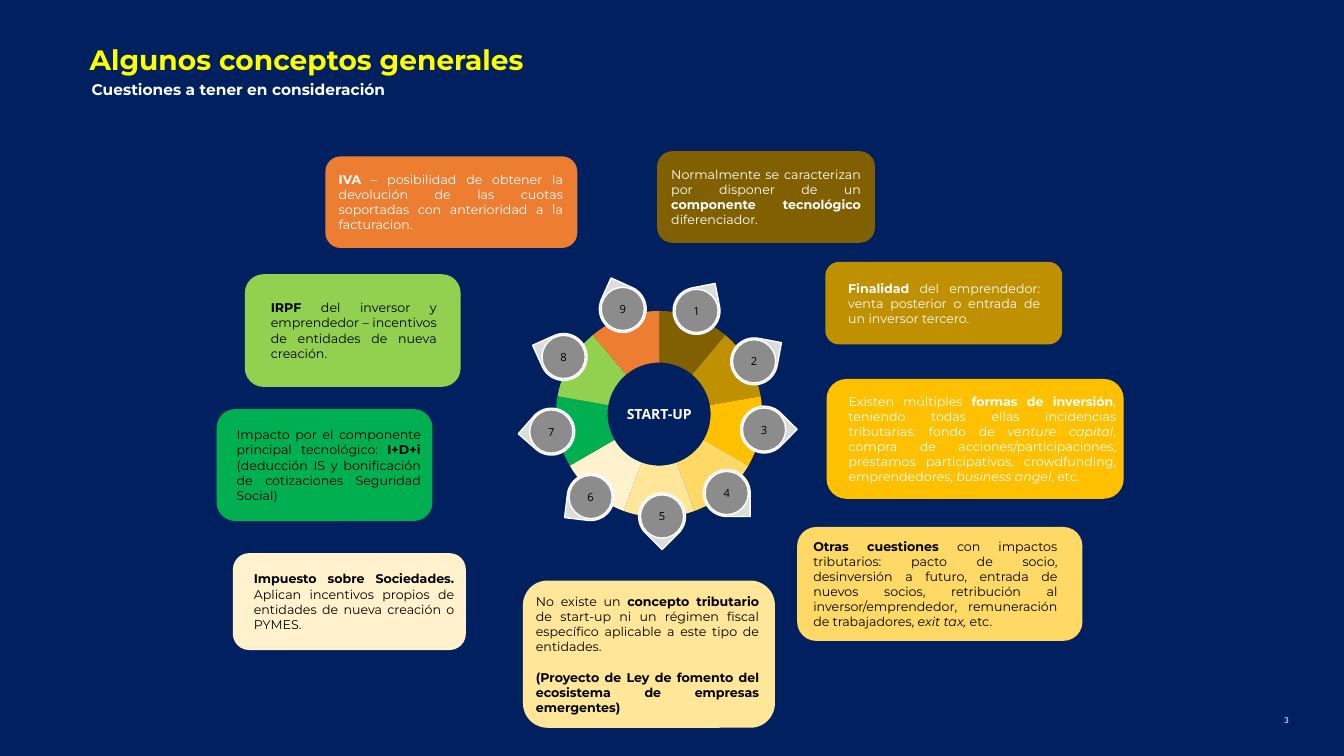
from dataclasses import dataclass

from lxml import etree
from pptx import Presentation
from pptx.chart.data import CategoryChartData
from pptx.dml.color import RGBColor
from pptx.enum.chart import XL_CHART_TYPE as ChartType
from pptx.enum.shapes import MSO_SHAPE as Shape
from pptx.enum.text import MSO_ANCHOR as Anchor, MSO_AUTO_SIZE as AutoSize, PP_ALIGN as Align
from pptx.oxml import parse_xml
from pptx.oxml.ns import nsdecls, qn
from pptx.util import Cm, Pt


@dataclass(frozen=True)
class Theme:
    background: str = "002060"
    title: str = "FFFF00"
    white: str = "FFFFFF"
    black: str = "000000"
    drop: str = "DCDCDC"
    badge: str = "8C8C8C"
    steps: tuple = ("806000", "BF9000", "FFC000", "FFD966", "FFE699",
                    "FFF2CC", "00B050", "92D050", "ED7D31")
    heading_font: str = "Montserrat"
    wheel_font: str = "Open Sans"
    number_font: str = "Calibri"
    title_size: float = 20
    subtitle_size: float = 11
    chart_size: float = 18
    hub_size: float = 10
    card_size: float = 9
    badge_size: float = 8
    number_size: float = 6.5


THEME = Theme()

# Box (left, top, width, height), left and right text margins in cm,
# text colour, paragraphs of (text, style)
CARDS = [
    ((16.56, 3.81, 5.49, 2.31), (0.36, 0.36), THEME.white, [[
        ("Normalmente se caracterizan por disponer de un ", ""),
        ("componente tecnológico", "b"), (" diferenciador.", "")]]),
    ((20.8, 6.6, 5.97, 2.08), (0.58, 0.56), THEME.white, [[
        ("Finalidad", "b"),
        (" del emprendedor: venta posterior o entrada de un inversor tercero.", "")]]),
    ((20.83, 9.55, 7.49, 3.02), (0.56, 0.2), THEME.white, [[
        ("Existen múltiples ", ""), ("formas de inversión", "b"),
        (", teniendo todas ellas incidencias tributarias: fondo de ", ""),
        ("venture capital", "i"),
        (", compra de acciones/participaciones, préstamos participativos, "
         "crowdfunding, emprendedores, ", ""),
        ("business angel", "i"), (", etc.", "")]]),
    ((20.09, 13.28, 7.19, 2.87), (0.41, 0.64), THEME.black, [[
        ("Otras cuestiones ", "b"),
        ("con impactos tributarios: pacto de socio, desinversión a futuro, entrada de "
         "nuevos socios, retribución al inversor/emprendedor, remuneración de "
         "trabajadores, ", ""),
        ("exit tax,", "i"), (" etc.", "")]]),
    ((13.18, 14.63, 6.35, 3.71), (0.33, 0.41), THEME.black, [
        [("No existe un ", ""), ("concepto tributario ", "b"),
         ("de start-up ni un régimen fiscal específico aplicable a este tipo de "
          "entidades.", "")],
        [("(Proyecto de Ley de fomento del ecosistema de empresas emergentes)", "b")]]),
    ((5.87, 13.94, 5.87, 2.44), (0.53, 0.3), THEME.black, [[
        ("Impuesto sobre Sociedades. ", "b"),
        ("Aplican incentivos propios de entidades de nueva creación o PYMES.", "")]]),
    ((5.46, 10.31, 5.44, 2.82), (0.51, 0.3), THEME.black, [[
        ("Impacto por el componente principal tecnológico: ", ""), ("I+D+i ", "b"),
        ("(deducción IS y bonificación de cotizaciones Seguridad Social)", "")]]),
    ((6.17, 6.91, 5.44, 2.84), (0.66, 0.61), THEME.black, [[
        ("IRPF", "b"),
        (" del inversor y emprendedor – incentivos de entidades de nueva creación.", "")]]),
    ((8.2, 3.94, 6.35, 2.31), (0.34, 0.37), THEME.white, [[
        ("IVA", "b"),
        (" – posibilidad de obtener la devolución de las cuotas soportadas con "
         "anterioridad a la facturacion.", "")]]),
]

# Offset of each badge from the wheel centre in cm, and turn of its teardrop
BADGES = [(0.94, -2.6, 349), (2.39, -1.33, 10.6), (2.64, 0.39, 44.6),
          (1.7, 1.99, 90), (0.07, 2.58, 134.9), (-1.73, 2.09, 186.8),
          (-2.72, 0.44, 221.3), (-2.41, -1.44, 245.6), (-0.92, -2.65, 294.3)]


def place(box):
    return [Cm(length) for length in box]


def around(x, y, width, height):
    """Box of the given size centred on a point."""
    return x - width / 2, y - height / 2, width, height


def style_font(font, name, size, color, style=""):
    font.name, font.size = name, Pt(size)
    font.color.rgb = RGBColor.from_string(color)
    font.bold, font.italic = style == "b", style == "i"


def set_frame(frame, anchor=Anchor.MIDDLE, left=0, right=0):
    frame.word_wrap, frame.auto_size = True, AutoSize.NONE
    frame.vertical_anchor = anchor
    frame.margin_left, frame.margin_right = Cm(left), Cm(right)
    frame.margin_top = frame.margin_bottom = 0


def write_line(shape, text, name, size, color, style="", align=Align.CENTER,
               anchor=Anchor.MIDDLE):
    frame = shape.text_frame
    frame.text = text
    set_frame(frame, anchor)
    para = frame.paragraphs[0]
    para.alignment = align
    style_font(para.runs[0].font, name, size, color, style)


def add_solid(page, kind, box, fill, line=None):
    shape = page.shapes.add_shape(kind, *place(box))
    shape.shadow.inherit = False
    shape.fill.solid()
    shape.fill.fore_color.rgb = RGBColor.from_string(fill)
    if line:
        shape.line.color.rgb = RGBColor.from_string(line)
        shape.line.width = Pt(1)
    else:
        shape.line.fill.background()
    return shape


def add_heading(page, box):
    left, top, width, height = box
    title = page.shapes.title
    title.left, title.top, title.width, title.height = place((left, top, width, height))
    write_line(title, "Algunos conceptos generales", THEME.heading_font,
               THEME.title_size, THEME.title, "b", Align.LEFT, Anchor.TOP)
    subtitle = page.shapes.add_textbox(*place((left + 0.05, top + 0.96, 10.5, 0.55)))
    write_line(subtitle, "Cuestiones a tener en consideración", THEME.heading_font,
               THEME.subtitle_size, THEME.white, "b", Align.LEFT, Anchor.TOP)


def add_ring(page, box):
    _, _, width, height = box
    data = CategoryChartData()
    data.categories = [str(number) for number in range(1, len(THEME.steps) + 1)]
    data.add_series("Series 1", [11] * len(THEME.steps))
    chart = page.shapes.add_chart(ChartType.DOUGHNUT, *place(box), data).chart
    chart.has_legend = chart.has_title = False
    style_font(chart.font, THEME.number_font, THEME.chart_size, THEME.black)
    plot = chart.plots[0]
    plot.vary_by_categories = False
    for index, color in enumerate(THEME.steps):
        segment = plot.series[0].points[index].format
        segment.fill.solid()
        segment.fill.fore_color.rgb = RGBColor.from_string(color)
        segment.line.fill.background()
    chart.element.xpath(".//c:holeSize")[0].set("val", "65")
    area = chart.element.xpath(".//c:plotArea")[0]
    for layout in area.findall(qn("c:layout")):
        area.remove(layout)
    share_x, share_y = 5.2 / width, 5.2 / height
    values = {"x": (1 - share_x) / 2, "y": (1 - share_y) / 2, "w": share_x, "h": share_y}
    sides = "".join(f'<c:{side} val="{value:.3f}"/>' for side, value in values.items())
    area.insert(0, parse_xml(
        f'<c:layout {nsdecls("c")}><c:manualLayout><c:layoutTarget val="inner"/>'
        f'<c:xMode val="edge"/><c:yMode val="edge"/>{sides}</c:manualLayout></c:layout>'))


def add_wheel(page, box):
    """Ring of segments with numbered badges and a label in the hub."""
    left, top, width, height = box
    x, y = left + width / 2, top + height / 2
    add_ring(page, box)
    for number, (dx, dy, turn) in enumerate(BADGES, 1):
        drop = add_solid(page, Shape.TEAR, around(x + dx, y + dy, 1.18, 1.18),
                         THEME.drop, THEME.white)
        drop.rotation = turn
        badge = add_solid(page, Shape.OVAL, around(x + dx, y + dy, 1.09, 1.09),
                          THEME.badge, THEME.white)
        write_line(badge, str(number), THEME.wheel_font, THEME.badge_size, THEME.black)
    hub = page.shapes.add_textbox(*place(around(x, y, 3, 0.69)))
    write_line(hub, "START-UP", THEME.wheel_font, THEME.hub_size, THEME.white, "b")


def add_card(page, box, margins, fill, color, paragraphs):
    card = add_solid(page, Shape.ROUNDED_RECTANGLE, box, fill)
    corner = 0.05 * box[3]  # rounded corners already push the text inwards
    frame = card.text_frame
    set_frame(frame, Anchor.MIDDLE, *(margin - corner for margin in margins))
    for index, spans in enumerate(paragraphs):
        para = frame.add_paragraph() if index else frame.paragraphs[0]
        para.alignment = Align.JUSTIFY
        para.space_before = Pt(11 if index else 0)
        for text, style in spans:
            span = para.add_run()
            span.text = text
            style_font(span.font, THEME.heading_font, THEME.card_size, color, style)


def add_page_number(page, box):
    number = page.shapes.add_textbox(*place(box))
    write_line(number, "3", THEME.number_font, THEME.number_size, THEME.white,
               align=Align.RIGHT)
    run = number.text_frame.paragraphs[0].runs[0]._r
    field = etree.Element(qn("a:fld"), type="slidenum",
                          id="{B6F15528-21DE-4FAA-801E-634DDDAF4B2B}")
    run.getparent().replace(run, field)
    field.extend(list(run))


def build_concepts(deck):
    page = deck.slides.add_slide(deck.slide_layouts.get_by_name("Title Only"))
    page.background.fill.solid()
    page.background.fill.fore_color.rgb = RGBColor.from_string(THEME.background)
    add_heading(page, (2.26, 1.07, 23.32, 0.76))
    add_wheel(page, (12.73, 7.49, 7.77, 5.89))
    for (box, margins, color, paragraphs), fill in zip(CARDS, THEME.steps):
        add_card(page, box, margins, fill, color, paragraphs)
    add_page_number(page, (31.62, 17.85, 0.86, 0.6))


def main():
    deck = Presentation()
    deck.slide_width, deck.slide_height = Cm(33.87), Cm(19.05)
    # The slide number follows the deck's numbering, which starts at 3 here
    deck.element.set("firstSlideNum", "3")
    build_concepts(deck)
    deck.save("out.pptx")


if __name__ == "__main__":
    main()
